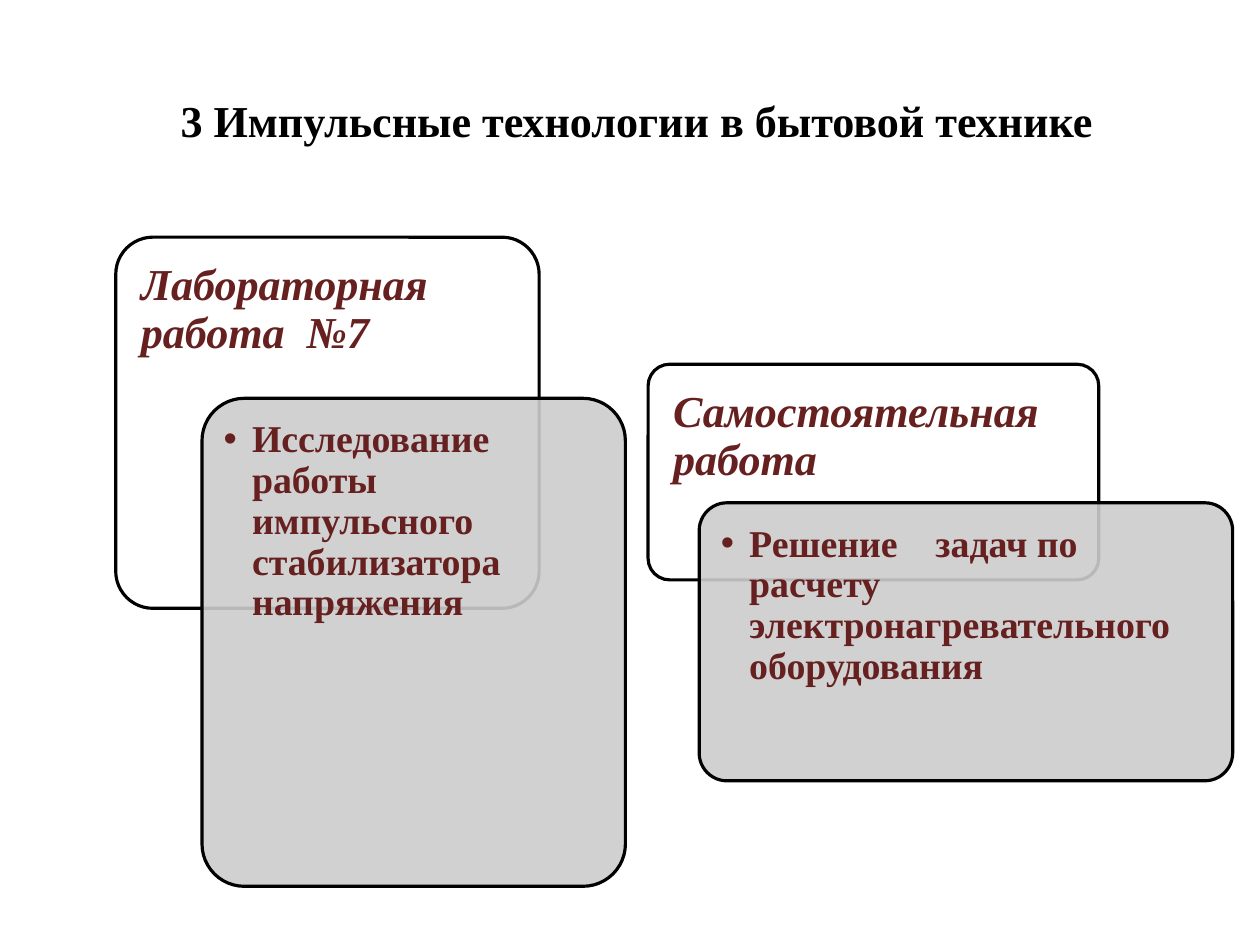
from pptx import Presentation
from pptx.dml.color import RGBColor
from pptx.enum.shapes import MSO_SHAPE
from pptx.enum.text import MSO_ANCHOR, MSO_AUTO_SIZE, PP_ALIGN
from pptx.util import Inches, Pt
from lxml.etree import SubElement
from pptx.oxml.ns import qn

TITLE = "3 Импульсные технологии в бытовой технике"
CARDS = [
    {"head": "Лабораторная работа  №7",
     "item": "Исследование работы импульсного стабилизатора напряжения",
     "back": (1.02, 2.09, 3.73, 3.27), "front": (1.78, 3.51, 3.73, 4.3)},
    {"head": "Самостоятельная работа",
     "item": "Решение    задач по  расчету электронагревательного оборудования",
     "back": (5.71, 3.21, 3.97, 1.9), "front": (6.16, 4.43, 4.7, 2.45)},
]
THEME = {
    "font": "Times New Roman",
    "ink": RGBColor(0, 0, 0),
    "text": RGBColor(0x67, 0x20, 0x20),
    "back": RGBColor(255, 255, 255),
    "front": RGBColor(0xCC, 0xCC, 0xCC),
    "big": Pt(28),
    "small": Pt(24),
    "line": Pt(2),
}
ROUND = 0.1
CORNER = 0.29


def apply(thing, **values):
    for name, value in values.items():
        setattr(thing, name, value)


def place(shape, box):
    names = ("left", "top", "width", "height")
    apply(shape, **dict(zip(names, map(Inches, box))))


def write(shape, text, pads, size, color, anchor=MSO_ANCHOR.TOP, italic=False):
    frame = shape.text_frame
    names = ("margin_left", "margin_top", "margin_right", "margin_bottom")
    apply(frame, word_wrap=True, auto_size=MSO_AUTO_SIZE.NONE,
          vertical_anchor=anchor, **dict(zip(names, map(Inches, pads))))
    line = frame.paragraphs[0]
    apply(line, alignment=PP_ALIGN.LEFT, space_before=Pt(0))
    run = line.add_run()
    run.text = text
    apply(run.font, name=THEME["font"], size=size, bold=True, italic=italic)
    run.font.color.rgb = color
    return line


def add_card(slide, box, fill):
    card = slide.shapes.add_shape(MSO_SHAPE.ROUNDED_RECTANGLE,
                                  *map(Inches, box))
    card.adjustments[0] = ROUND
    card.shadow.inherit = False
    card.fill.solid()
    card.fill.fore_color.rgb = fill
    card.line.color.rgb = THEME["ink"]
    card.line.width = THEME["line"]
    return card


def add_pair(slide, body, data):
    back = add_card(slide, data["back"], THEME["back"])
    pad = 0.22 - ROUND * CORNER * min(data["back"][2:])
    head = write(back, data["head"], [pad] * 4, THEME["big"], THEME["text"],
                 italic=True)
    head.line_spacing = 0.9

    front = add_card(slide, data["front"], THEME["front"])
    color = front.fill._xPr.find(".//" + qn("a:srgbClr"))
    SubElement(color, qn("a:alpha"), val="90000")

    place(body, data["front"])
    body.element.getparent().append(body.element)
    item = write(body, data["item"], [0.19] * 4, THEME["small"], THEME["text"])
    item.line_spacing = 0.9
    props = item._p.get_or_add_pPr()
    props.set("marL", str(Inches(0.25)))
    props.set("indent", str(Inches(-0.25)))
    SubElement(props, qn("a:buChar"), char="•")


def main():
    deck = Presentation()
    apply(deck, slide_width=Inches(11.1), slide_height=Inches(8.3))
    slide = deck.slides.add_slide(deck.slide_layouts[3])
    title, *bodies = slide.placeholders
    place(title, (1.49, 0.63, 9.19, 1.25))
    write(title, TITLE, (0.1, 0.05, 0.1, 0.44), THEME["big"], THEME["ink"],
          MSO_ANCHOR.MIDDLE)
    for body, data in zip(bodies, CARDS):
        add_pair(slide, body, data)
    deck.save("out.pptx")


if __name__ == "__main__":
    main()
